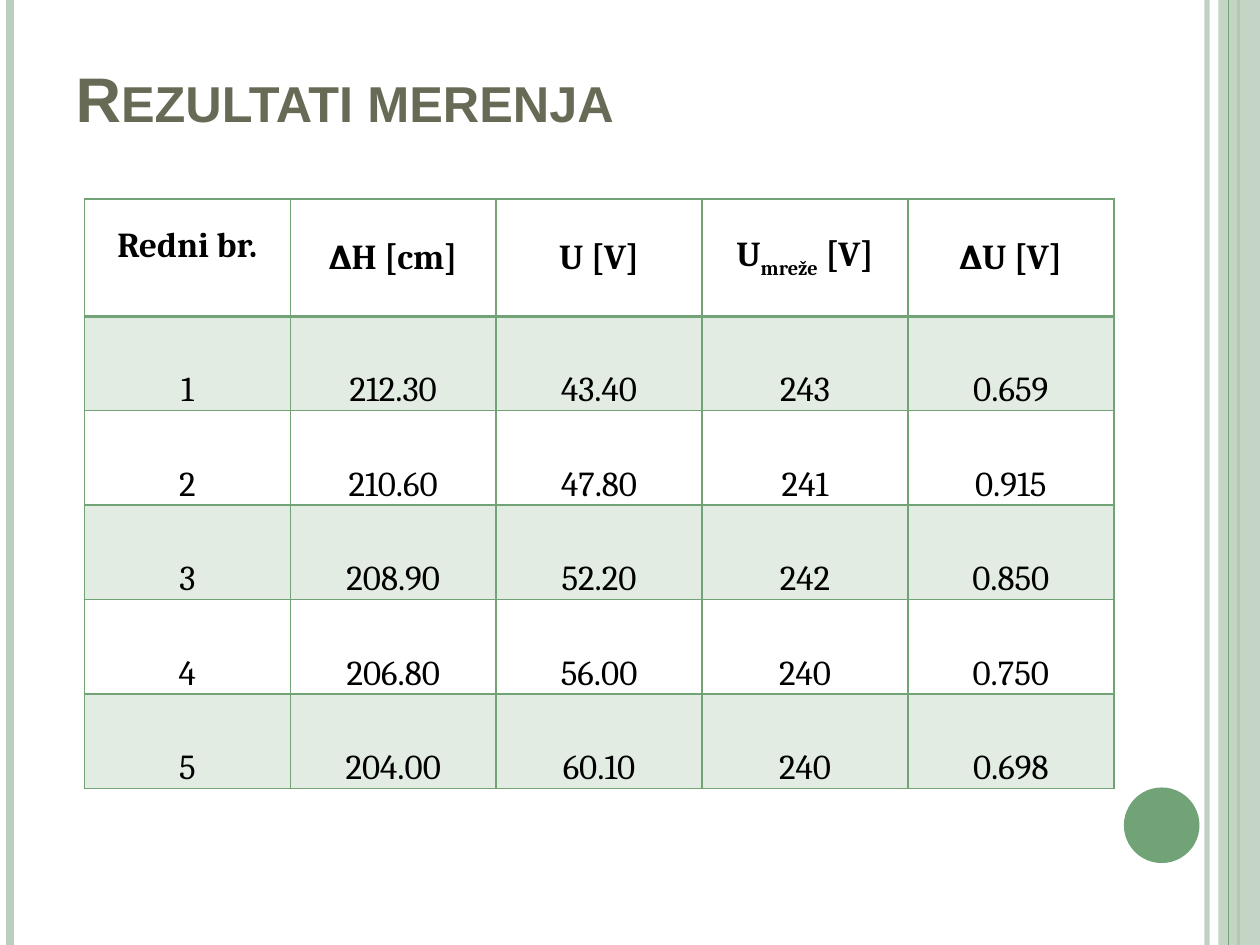
import pptx
import pptx.util
import pptx.dml.color
import pptx.enum.shapes
import pptx.enum.text
import pptx.oxml.ns
from lxml import etree

Inches, Pt = pptx.util.Inches, pptx.util.Pt
qn = pptx.oxml.ns.qn
ANCHOR = pptx.enum.text.MSO_ANCHOR
ALIGN = pptx.enum.text.PP_ALIGN

COLORS = {
    "green": "72A376",
    "pale": "BCCEBD",
    "title": "676A55",
    "text": "000000",
}
RGB = {name: pptx.dml.color.RGBColor.from_string(value) for name, value in COLORS.items()}


def set_alpha(parent, percent):
    color = parent.find(qn("a:solidFill")).find(qn("a:srgbClr"))
    etree.SubElement(color, qn("a:alpha")).set("val", str(percent * 1000))


def add_border(cell, side, points):
    border = etree.SubElement(cell._tc.get_or_add_tcPr(), qn(f"a:ln{side}"), w=str(Pt(points)))
    fill = etree.SubElement(border, qn("a:solidFill"))
    etree.SubElement(fill, qn("a:srgbClr"), val=COLORS["green"])


deck = pptx.Presentation()
deck.slide_width, deck.slide_height = Inches(10), Inches(7.5)
slide = deck.slides.add_slide(deck.slide_layouts[5])

# Vertical stripes, back to front; the band lies between the edge lines
stripes = [
    (9.58, "pale", 3, 93),
    (0.08, "pale", 4.5, 100),
    (9.83, "green", 1.5, 100),
    "band",
    (9.75, "green", 0.75, 100),
]
for stripe in stripes:
    if stripe == "band":
        band = slide.shapes.add_shape(pptx.enum.shapes.MSO_SHAPE.RECTANGLE,
                                      Inches(9.67), 0, Inches(0.33), Inches(7.5))
        band.shadow.inherit = False
        band.fill.solid()
        band.fill.fore_color.rgb = RGB["pale"]
        band.line.fill.background()
        set_alpha(band._element.spPr, 87)
        continue
    x, color, width, opacity = stripe
    rule = slide.shapes.add_connector(pptx.enum.shapes.MSO_CONNECTOR.STRAIGHT,
                                      Inches(x), 0, Inches(x), Inches(7.5))
    rule.line.color.rgb = RGB[color]
    rule.line.width = Pt(width)
    if opacity < 100:
        set_alpha(rule._element.spPr.find(qn("a:ln")), opacity)
    etree.SubElement(rule._element.spPr, qn("a:effectLst"))

# Corner dot
dot = slide.shapes.add_shape(pptx.enum.shapes.MSO_SHAPE.OVAL,
                             Inches(8.92), Inches(6.25), Inches(0.6), Inches(0.6))
dot.shadow.inherit = False
dot.fill.solid()
dot.fill.fore_color.rgb = RGB["green"]
dot.line.fill.background()

# Title in small capitals
title = slide.shapes.title
title.left, title.top = Inches(0.5), Inches(0.3)
title.width, title.height = Inches(8.17), Inches(1.25)
title_frame = title.text_frame
frame_format = {"vertical_anchor": ANCHOR.BOTTOM, "margin_bottom": Inches(0.48),
                "word_wrap": True, "auto_size": pptx.enum.text.MSO_AUTO_SIZE.NONE}
for name, value in frame_format.items():
    setattr(title_frame, name, value)
heading = title_frame.paragraphs[0]
heading.alignment = ALIGN.LEFT
heading_run = heading.add_run()
heading_run.text = "Rezultati merenja"
for name, value in {"name": "Arial", "size": Pt(36), "bold": True}.items():
    setattr(heading_run.font, name, value)
heading_run.font.color.rgb = RGB["title"]
heading_run._r.get_or_add_rPr().set("cap", "small")

# Measurements; a tuple holds base, subscript and rest
measurements = [
    ["Redni br.", "∆H [cm]", "U [V]", ("U", "mreže", " [V]"), "∆U [V]"],
    ["1", "212.30", "43.40", "243", "0.659"],
    ["2", "210.60", "47.80", "241", "0.915"],
    ["3", "208.90", "52.20", "242", "0.850"],
    ["4", "206.80", "56.00", "240", "0.750"],
    ["5", "204.00", "60.10", "240", "0.698"],
]
results = slide.shapes.add_table(len(measurements), len(measurements[0]), Inches(0.67),
                                 Inches(1.58), Inches(8.17), Inches(4.68)).table
results.first_row = results.horz_banding = False
for column in results.columns:
    column.width = Inches(8.17 / 5)
for r, values in enumerate(measurements):
    header = r == 0
    results.rows[r].height = Inches(0.93 if header else 0.75)
    for c, value in enumerate(values):
        cell = results.cell(r, c)
        cell_format = {
            "margin_left": 0, "margin_right": 0, "margin_top": 0,
            "margin_bottom": Inches(0.18 if header and c == 0 else 0),
            "vertical_anchor": ANCHOR.MIDDLE if header else ANCHOR.BOTTOM,
        }
        for name, setting in cell_format.items():
            setattr(cell, name, setting)
        for side in "LRTB":
            heavy = (header and side == "B") or (r == 1 and side == "T")
            add_border(cell, side, 2 if heavy else 1)
        if r % 2:
            cell.fill.solid()
            cell.fill.fore_color.rgb = RGB["green"]
            set_alpha(cell._tc.tcPr, 20)
        else:
            cell.fill.background()
        paragraph = cell.text_frame.paragraphs[0]
        paragraph.alignment = ALIGN.CENTER
        for i, part in enumerate(value if isinstance(value, tuple) else (value,)):
            run = paragraph.add_run()
            run.text = part
            for name, setting in {"name": "Cambria", "size": Pt(20), "bold": header}.items():
                setattr(run.font, name, setting)
            run.font.color.rgb = RGB["text"]
            if i == 1:
                run._r.get_or_add_rPr().set("baseline", "-25000")

deck.save("out.pptx")
